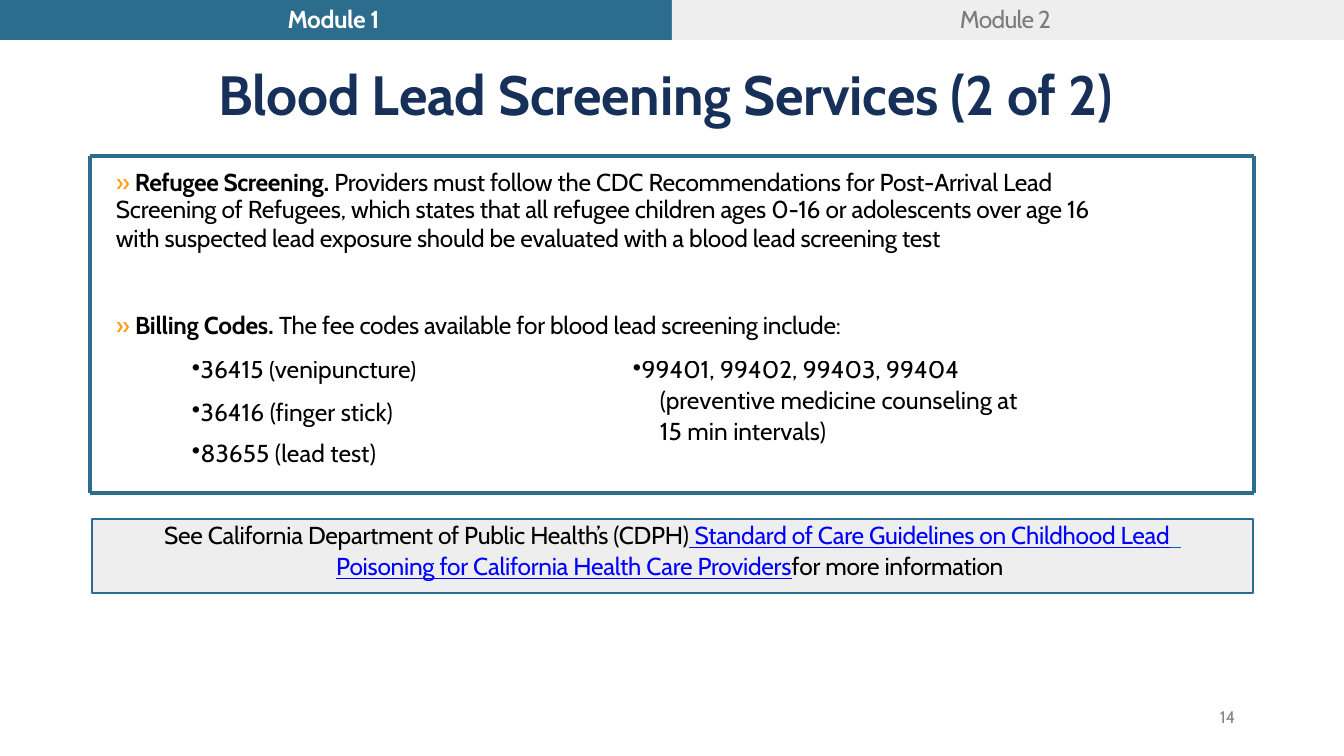
from dataclasses import dataclass

from lxml import etree
from pptx import Presentation
from pptx import util as u
from pptx.dml.color import RGBColor
from pptx.enum import shapes, text
from pptx.oxml.ns import qn


@dataclass(frozen=True)
class Theme:
    font: str = "Cabin"
    teal: str = "2C6D8D"
    navy: str = "16305A"
    pale: str = "EEEEEE"
    white: str = "FFFFFF"
    black: str = "000000"
    grey: str = "7B7B7B"
    number_grey: str = "858585"
    orange: str = "FF9900"
    link: str = "0000FF"
    link_end: str = "0560C1"
    title_size: float = 39.5
    body_size: float = 17.5
    number_size: float = 12


@dataclass
class Run:
    words: str
    color: str = Theme.black
    spacing: float = 0
    bold: bool = False
    underline: bool = False
    size: float = Theme.body_size


@dataclass
class Line:
    runs: list
    pitch: float
    before: float = 0
    after: float = 0
    left: int = 0
    first: int = 0
    bullet: str = ""
    centred: bool = False


T = Theme()
SLIDE_W, SLIDE_H = 1344, 756
TAB_H = 40
FRAME_LEFT, FRAME_TOP, FRAME_RIGHT, FRAME_BOTTOM = 90, 156, 1254, 493
BODY_LEFT, BODY_W = 96, 1153

TABS = [
    (T.teal, Run("Module 1 ", T.white, -0.3, bold=True)),
    (T.pale, Run("Module 2 ", T.grey, -0.5)),
]
TITLE = [Line([Run("Blood Lead Screening Services (2 of 2) ", T.navy, -0.1, True,
                   size=T.title_size)], 52, centred=True)]
SCREENING = [
    Line([Run("»", T.orange, -0.2),
          Run(" Refugee Screening. ", spacing=-0.3, bold=True),
          Run("Providers must follow the CDC Recommendations for Post-Arrival Lead",
              spacing=-0.2)], 21, left=20),
    Line([Run("Screening of Refugees, which states that all refugee children ages 0-16 "
              "or adolescents over age 16", spacing=-0.2)], 19, left=20),
    Line([Run("with suspected lead exposure should be evaluated with a blood lead "
              "screening test", spacing=-0.2)], 21, left=20),
    Line([Run("»", T.orange, -0.2),
          Run(" Billing Codes. ", spacing=-0.2, bold=True),
          Run("The fee codes available for blood lead screening include:",
              spacing=-0.2)], 23, before=39.1, after=5.7, left=20),
]
CODES = [
    (428, [
        Line([Run("36415 (venipuncture)")], 18, left=66, first=30, bullet="•"),
        Line([Run("36416 (finger stick)")], 23, 7.5, left=66, first=30, bullet="•"),
        Line([Run("83655 (lead test)")], 22, 7.2, left=66, first=30, bullet="•"),
    ]),
    (725, [
        Line([Run("99401, 99402, 99403, 99404 ")], 18, left=79, first=30, bullet="•"),
        Line([Run("(preventive medicine counseling at")], 22, left=136),
        Line([Run("15 min intervals)")], 22, after=16.9, left=136),
    ]),
]
GUIDELINES = [
    Line([Run("See California Department of Public Health’s (CDPH)", spacing=-0.2),
          Run(" Standard of Care Guidelines on Childhood Lead", T.link, -0.2, underline=True),
          Run("  ", T.link_end, -0.2, underline=True)], 22, centred=True),
    Line([Run("Poisoning for California Health Care Providers", T.link, -0.2, underline=True),
          Run("for more information ", spacing=-0.2)], 22, after=4.2, centred=True),
]
NUMBER = [Line([Run("14", T.number_grey, size=T.number_size)], 16, left=1220)]


def px(length):
    return u.Emu(round(length * 914400 / 100.8))


def rgb(color):
    return RGBColor.from_string(color)


def write(frame, lines):
    for i, line in enumerate(lines):
        para = frame.paragraphs[0] if i == 0 else frame.add_paragraph()
        para.alignment = text.PP_ALIGN.CENTER if line.centred else text.PP_ALIGN.LEFT
        para.line_spacing = u.Pt(line.pitch)
        para.space_before, para.space_after = u.Pt(line.before), u.Pt(line.after)
        props = para._p.get_or_add_pPr()
        props.set("marL", str(px(line.left)))
        props.set("indent", str(px(line.first)))
        if line.bullet:
            etree.SubElement(props, qn("a:buChar")).set("char", line.bullet)
        else:
            etree.SubElement(props, qn("a:buNone"))
        for part in line.runs:
            run = para.add_run()
            run.text = part.words
            font = run.font
            font.name, font.size = T.font, u.Pt(part.size)
            font.bold, font.underline = part.bold, part.underline
            font.color.rgb = rgb(part.color)
            run._r.get_or_add_rPr().set("spc", str(round(part.spacing * 100)))


def fill_frame(shape, lines, top_inset=0):
    frame = shape.text_frame
    frame.word_wrap = True
    frame.auto_size = text.MSO_AUTO_SIZE.NONE
    frame.vertical_anchor = text.MSO_ANCHOR.TOP
    frame.margin_left = frame.margin_right = frame.margin_bottom = 0
    frame.margin_top = px(top_inset)
    write(frame, lines)


def add_panel(slide, box, fill, lines, top_inset=0, border=None):
    panel = slide.shapes.add_shape(shapes.MSO_SHAPE.RECTANGLE, *map(px, box))
    panel.shadow.inherit = False
    panel.fill.solid()
    panel.fill.fore_color.rgb = rgb(fill)
    if border:
        panel.line.color.rgb, panel.line.width = rgb(border), u.Pt(1.7)
    else:
        panel.line.fill.background()
    fill_frame(panel, lines, top_inset)


def add_text(slide, box, lines, top_inset=0):
    fill_frame(slide.shapes.add_textbox(*map(px, box)), lines, top_inset)


def add_codes(slide):
    table = slide.shapes.add_table(1, len(CODES), *map(px, (BODY_LEFT, 360, BODY_W, 111))).table
    table.first_row = table.horz_banding = False
    for i, (width, lines) in enumerate(CODES):
        table.columns[i].width = px(width)
        cell = table.cell(0, i)
        cell.fill.background()
        cell.margin_left = cell.margin_right = cell.margin_top = cell.margin_bottom = 0
        write(cell.text_frame, lines)


def add_frame(slide):
    left, top, right, bottom = FRAME_LEFT, FRAME_TOP, FRAME_RIGHT, FRAME_BOTTOM
    for ends, weight in [((left, top, right, top), 2.9), ((left, bottom, right, bottom), 3.35),
                         ((left, top, left, bottom), 2.9), ((right, top, right, bottom), 2.9)]:
        edge = slide.shapes.add_connector(shapes.MSO_CONNECTOR.STRAIGHT, *map(px, ends))
        edge.line.color.rgb, edge.line.width = rgb(T.teal), u.Pt(weight)
        etree.SubElement(edge._element.spPr, qn("a:effectLst"))


def main():
    deck = Presentation()
    deck.slide_width, deck.slide_height = px(SLIDE_W), px(SLIDE_H)
    slide = deck.slides.add_slide(deck.slide_layouts[5])
    title = slide.shapes.title
    title.left, title.top, title.width, title.height = map(px, (0, TAB_H, SLIDE_W, 116))
    fill_frame(title, TITLE, 14)
    tab_w = SLIDE_W // len(TABS)
    for i, (fill, label) in enumerate(TABS):
        add_panel(slide, (i * tab_w, 0, tab_w, TAB_H), fill, [Line([label], 23, centred=True)], 1)
    add_panel(slide, (92, 519, 1161, 74), T.pale, GUIDELINES, border=T.teal)
    add_text(slide, (0, 705, SLIDE_W, 23), NUMBER)
    add_text(slide, (BODY_LEFT, FRAME_TOP, BODY_W, 190), SCREENING, 11)
    add_codes(slide)
    add_frame(slide)
    deck.save("out.pptx")


if __name__ == "__main__":
    main()
